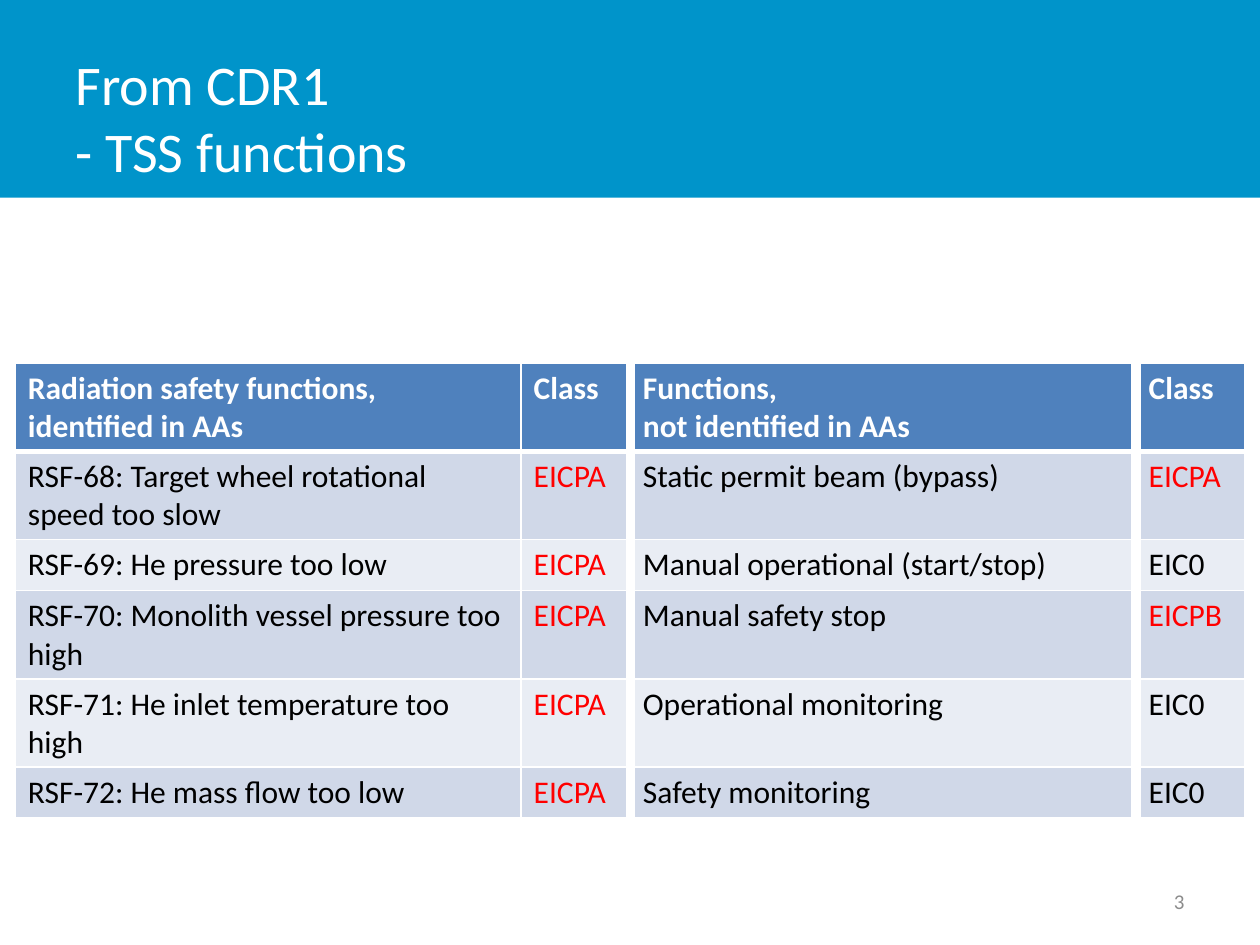
from dataclasses import dataclass

from lxml import etree
from pptx import Presentation
from pptx.dml.color import RGBColor
from pptx.enum import shapes, text
from pptx.oxml import ns
from pptx.util import Pt

WHITE, BLACK, RED = "FFFFFF", "000000", "FF0000"
BANNER_BLUE, HEADER_BLUE, NUMBER_GREY = "0094CA", "4F81BD", "8C8C8C"
BANDS = ("D0D8E8", "E9EDF4")
SAFETY_CLASSES = ("EICPA", "EICPB")

COLUMN_WIDTHS = (289, 62.4, 289, 62.4)
ONE_LINE, TWO_LINES = 29.2, 50.4
THIN, HEADER_RULE, COLUMN_GAP = 1, 3, 6
GAPS_AFTER = (1, 2)


@dataclass
class FunctionRow:
    height: float
    cells: tuple[str, str, str, str]


@dataclass
class Label:
    content: str
    left: float
    top: float
    width: float
    height: float
    size: float
    color: str
    alignment: text.PP_ALIGN = text.PP_ALIGN.LEFT


ROWS = [
    FunctionRow(TWO_LINES, ("Radiation safety functions, identified in AAs", "Class",
                            "Functions, \vnot identified in AAs", "Class")),
    FunctionRow(TWO_LINES, ("RSF-68: Target wheel rotational speed too slow", "EICPA",
                            "Static permit beam (bypass)", "EICPA")),
    FunctionRow(ONE_LINE, ("RSF-69: He pressure too low", "EICPA",
                           "Manual operational (start/stop)", "EIC0")),
    FunctionRow(TWO_LINES, ("RSF-70: Monolith vessel pressure too high", "EICPA",
                            "Manual safety stop", "EICPB")),
    FunctionRow(TWO_LINES, ("RSF-71: He inlet temperature too high", "EICPA",
                            "Operational monitoring", "EIC0")),
    FunctionRow(ONE_LINE, ("RSF-72: He mass flow too low", "EICPA",
                           "Safety monitoring", "EIC0")),
]

LABELS = [
    Label("From CDR1\v- TSS functions", 36, 21.6, 562.4, 90, 32, WHITE),
    Label("3", 516.2, 500.4, 167.8, 28.8, 12, NUMBER_GREY, text.PP_ALIGN.RIGHT),
]


def rgb(color: str) -> RGBColor:
    return RGBColor.from_string(color)


def format_font(paragraph, size: float, color: str, bold: bool = False) -> None:
    values = {"name": "Calibri", "size": Pt(size), "bold": bold}
    for run in paragraph.runs:
        for name, value in values.items():
            setattr(run.font, name, value)
        run.font.color.rgb = rgb(color)


def draw_banner(slide) -> None:
    banner = slide.shapes.add_shape(shapes.MSO_SHAPE.RECTANGLE, 0, 0, Pt(720), Pt(113))
    banner.shadow.inherit = False
    banner.fill.solid()
    banner.fill.fore_color.rgb = rgb(BANNER_BLUE)
    banner.line.fill.background()


def draw_label(slide, label: Label) -> None:
    box = slide.shapes.add_textbox(Pt(label.left), Pt(label.top),
                                   Pt(label.width), Pt(label.height))
    frame = box.text_frame
    frame.word_wrap = True
    frame.vertical_anchor = text.MSO_ANCHOR.MIDDLE
    paragraph = frame.paragraphs[0]
    paragraph.text = label.content
    paragraph.alignment = label.alignment
    format_font(paragraph, label.size, label.color)


def set_borders(cell, widths: dict[str, float]) -> None:
    """Put white borders before the cell's fill, in the order the schema wants."""
    properties = cell._tc.get_or_add_tcPr()
    for index, (side, width) in enumerate(widths.items()):
        line = etree.Element(ns.qn(f"a:ln{side}"), w=str(Pt(width)))
        fill = etree.SubElement(line, ns.qn("a:solidFill"))
        etree.SubElement(fill, ns.qn("a:srgbClr"), val=WHITE)
        properties.insert(index, line)


def draw_cell(cell, content: str, row: int, column: int) -> None:
    is_header = row == 0
    cell.fill.solid()
    cell.fill.fore_color.rgb = rgb(HEADER_BLUE if is_header else BANDS[(row - 1) % 2])
    paragraph = cell.text_frame.paragraphs[0]
    paragraph.text = content
    color = WHITE if is_header else RED if content in SAFETY_CLASSES else BLACK
    format_font(paragraph, 18, color, bold=is_header)
    set_borders(cell, {
        "L": COLUMN_GAP if column - 1 in GAPS_AFTER else THIN,
        "R": COLUMN_GAP if column in GAPS_AFTER else THIN,
        "T": HEADER_RULE if row == 1 else THIN,
        "B": HEADER_RULE if is_header else THIN,
    })


def draw_function_table(slide, rows: list[FunctionRow]) -> None:
    table = slide.shapes.add_table(
        len(rows), len(COLUMN_WIDTHS), Pt(8.8), Pt(207.4),
        Pt(sum(COLUMN_WIDTHS)), Pt(sum(row.height for row in rows))).table
    for column, width in zip(table.columns, COLUMN_WIDTHS):
        column.width = Pt(width)
    for row_index, row in enumerate(rows):
        table.rows[row_index].height = Pt(row.height)
        for column_index, content in enumerate(row.cells):
            draw_cell(table.cell(row_index, column_index), content,
                      row_index, column_index)


def main() -> None:
    presentation = Presentation()
    presentation.slide_width, presentation.slide_height = Pt(720), Pt(540)
    slide = presentation.slides.add_slide(presentation.slide_layouts[6])
    draw_banner(slide)
    for label in LABELS:
        draw_label(slide, label)
    draw_function_table(slide, ROWS)
    presentation.save("out.pptx")


if __name__ == "__main__":
    main()
